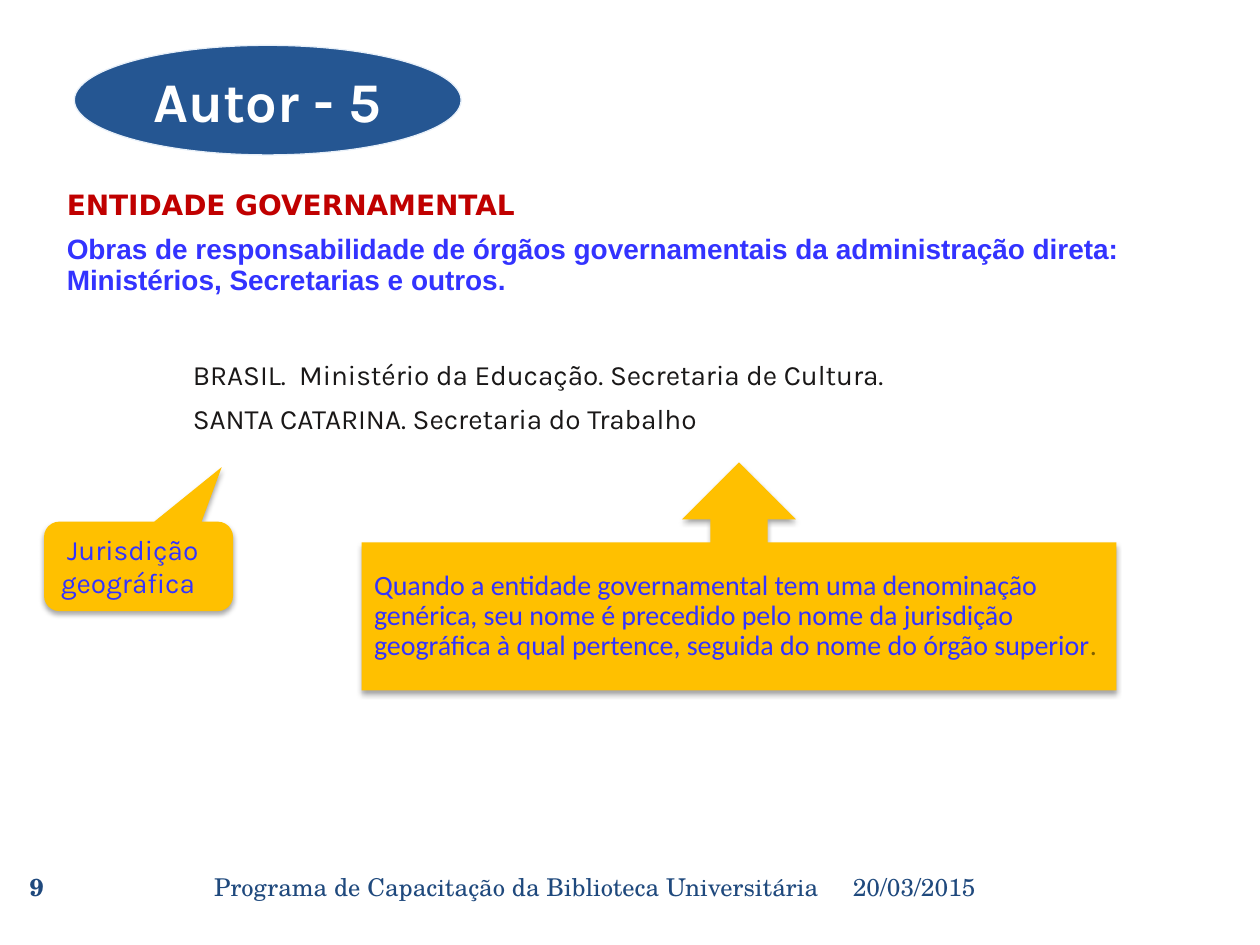
from pptx import Presentation
from pptx.util import Inches, Pt
from pptx.dml.color import RGBColor
from pptx.enum.shapes import MSO_SHAPE as Shape
from pptx.enum.text import PP_ALIGN as Align, MSO_ANCHOR as Anchor, MSO_AUTO_SIZE as Auto
from pptx.oxml import parse_xml
from pptx.oxml.ns import nsdecls

# Theme
THEME = dict(
    navy="255692", pale="E8F0F9", white="FFFFFF", red="C00000", blue="3333FF",
    ink="1A1818", gold="FFC000", olive="806000", foot="1F497D",
    head=32, text=16, small=14,
    main="Karla", label="DejaVu Sans", lead="Arial", note="Calibri", serif="TeX Gyre Schola",
)

# Content: each paragraph is a list of (text, colour) runs and its format
TITLE = [([("Autor - 5", "white")], dict(size="head", bold=True, align=Align.CENTER))]
BODY = [
    ([("ENTIDADE GOVERNAMENTAL", "red")], dict(font="label", bold=True, line=0.9)),
    ([("Obras de responsabilidade de órgãos governamentais da administração direta: "
       "Ministérios, Secretarias e outros.", "blue")],
     dict(font="lead", bold=True, line=0.9, before=8)),
    ([("BRASIL.  Ministério da Educação. Secretaria de Cultura.", "ink")],
     dict(line=0.9, before=37, left=1)),
    ([("SANTA CATARINA. Secretaria do Trabalho", "ink")],
     dict(line=0.9, before=8, left=1)),
]
RULE = [([("Quando a entidade governamental tem uma denominação genérica, seu nome é "
           "precedido pelo nome da jurisdição geográfica à qual pertence, seguida do "
           "nome do órgão superior", "blue"), (".", "olive")],
         dict(font="note", line=0.9))]
PLACE = [
    ([("Jurisdição", "blue")], dict(left=0.05)),
    ([("geográfica", "blue")], {}),
]
FOOT = [  # text, left, width, format
    ("20/03/2015", 6.67, 2.92, {}),
    ("Programa de Capacitação da Biblioteca Universitária", 0.67, 5.93,
     dict(align=Align.RIGHT)),
    ("9", 0, 0.58, dict(align=Align.CENTER, bold=True)),
]


def color(name):
    return RGBColor.from_string(THEME[name])


def put(par, runs, font="main", size="text", bold=False, align=Align.LEFT,
        line=1.0, before=0, left=0):
    """Write runs into a paragraph, unbulleted, with the given format."""
    props = par._p.get_or_add_pPr()
    props.set("marL", str(Inches(left)))
    props.set("indent", "0")
    props.append(parse_xml(f"<a:buNone {nsdecls('a')}/>"))
    par.alignment, par.line_spacing, par.space_before = align, line, Pt(before)
    for text, tone in runs:
        run = par.add_run()
        run.text = text
        run.font.name, run.font.size = THEME[font], Pt(THEME[size])
        run.font.bold, run.font.color.rgb = bold, color(tone)


def write(shape, pars, anchor=Anchor.MIDDLE):
    frame = shape.text_frame
    frame.auto_size, frame.word_wrap = Auto.NONE, True
    frame.vertical_anchor = anchor
    for i, (runs, form) in enumerate(pars):
        put(frame.add_paragraph() if i else frame.paragraphs[0], runs, **form)


def place(shape, *box):
    shape.left, shape.top, shape.width, shape.height = map(Inches, box)


def draw(kind, box, fill, line=None):
    shape = slide.shapes.add_shape(kind, *map(Inches, box))
    shape.shadow.inherit = False
    shape.fill.solid()
    shape.fill.fore_color.rgb = color(fill)
    if line:
        shape.line.color.rgb = color(line)
        shape.line.width = Pt(0.75)
    else:
        shape.line.fill.background()
    return shape


def shade(shape):
    """Give a shape a soft shadow straight below it."""
    shape._element.spPr.find("{*}effectLst").append(parse_xml(
        f'<a:outerShdw {nsdecls("a")} blurRad="{Pt(3)}" dist="{Pt(2)}" dir="5400000" '
        'algn="ctr" rotWithShape="0"><a:srgbClr val="000000"><a:alpha val="35000"/>'
        '</a:srgbClr></a:outerShdw>'))


deck = Presentation()
deck.slide_width, deck.slide_height = Inches(10), Inches(7.5)
slide = deck.slides.add_slide(deck.slide_layouts[1])

# Title on an oval
spot = (0.59, 0.36, 3.07, 0.87)
oval = draw(Shape.OVAL, spot, "navy", "pale")
title = slide.shapes.title
title._element.addprevious(oval._element)
place(title, *spot)
write(title, TITLE)

# Body
body = slide.placeholders[1]
place(body, 0.43, 1.47, 9.22, 3.32)
write(body, BODY, Anchor.TOP)

# Callouts
rule = draw(Shape.UP_ARROW_CALLOUT, (2.87, 3.67, 5.99, 1.81), "gold")
shade(rule)
write(rule, RULE)

label = draw(Shape.ROUNDED_RECTANGULAR_CALLOUT, (0.35, 4.14, 1.5, 0.71), "gold")
for i, value in enumerate((0.44, -1.11, 0.17)):
    label.adjustments[i] = value
shade(label)
write(label, PLACE, Anchor.TOP)

# Footer
for text, left, width, form in FOOT:
    box = slide.shapes.add_textbox(*map(Inches, (left, 6.83, width, 0.41)))
    write(box, [([(text, "foot")], dict(font="serif", size="small", **form))])

deck.save("out.pptx")
